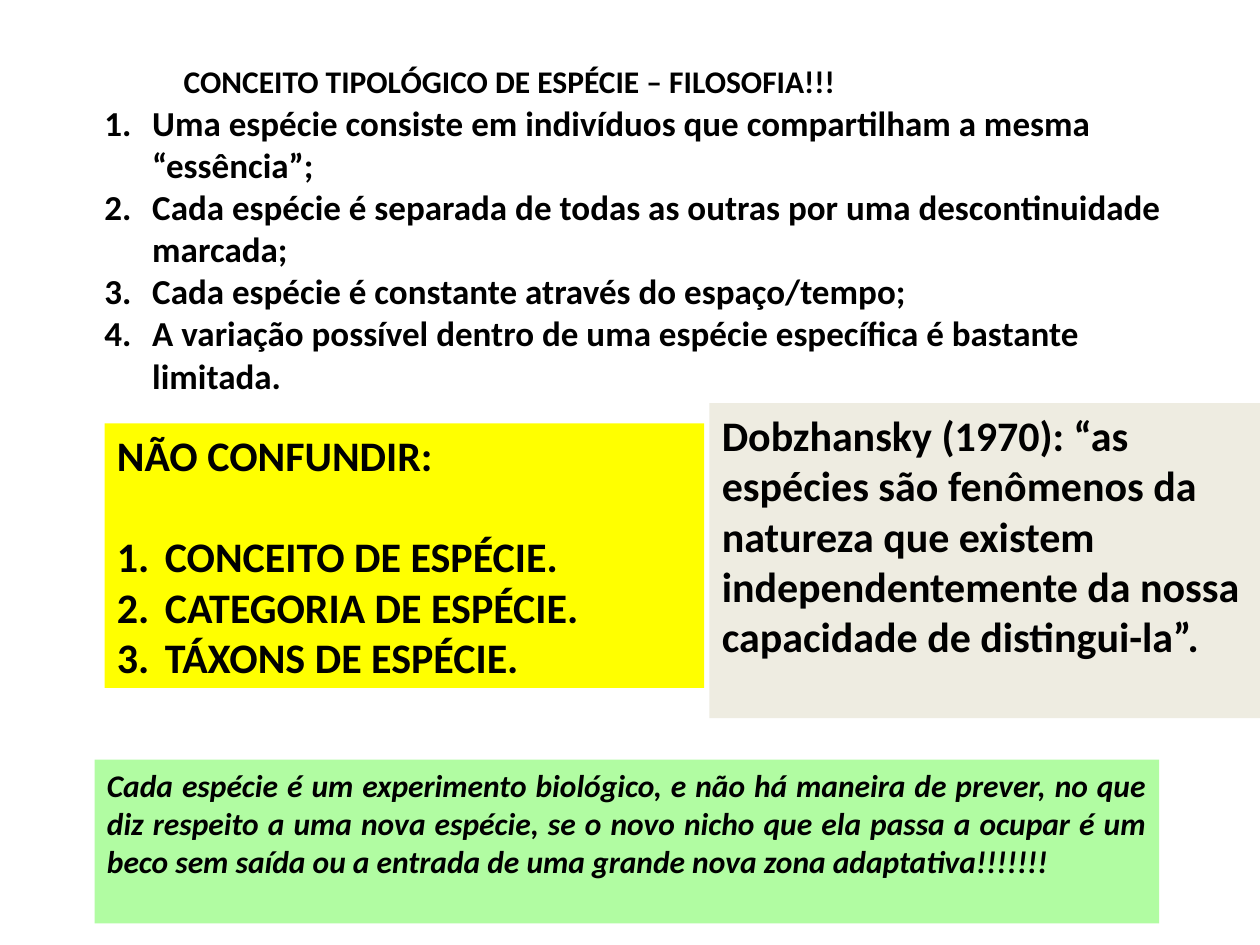
from lxml import etree
from pptx import Presentation
from pptx import util as u
from pptx.dml.color import RGBColor
from pptx.enum import shapes, text
from pptx.oxml import ns

WIDE, HIGH = u.Inches(10), u.Inches(7.5)
COLS, ROWS = 100, 75
HANG = u.Inches(0.38)


def tint(code):
    """Turn a hex string into a colour."""
    return RGBColor.from_string(code)


def place(col, row, cols, rows):
    """Turn grid columns and rows into lengths."""
    dx, dy = WIDE / COLS, HIGH / ROWS
    return [round(n) for n in (col * dx, row * dy, cols * dx, rows * dy)]


def number(para):
    """Give a paragraph a hanging automatic number."""
    props = para._p.get_or_add_pPr()
    props.set("marL", str(HANG))
    props.set("indent", str(-HANG))
    font = etree.SubElement(props, ns.qn("a:buFont"))
    font.set("typeface", "+mj-lt")
    mark = etree.SubElement(props, ns.qn("a:buAutoNum"))
    mark.set("type", "arabicPeriod")


def write(shape, lines, size=24, italic=False, align="LEFT", first=None, gap=0):
    """Fill a shape with bold lines, numbered from index first on."""
    frame = shape.text_frame
    frame.word_wrap = True
    frame.vertical_anchor = text.MSO_ANCHOR.TOP
    for i, line in enumerate(lines):
        para = frame.add_paragraph() if i else frame.paragraphs[0]
        para.alignment = getattr(text.PP_ALIGN, align)
        if first is not None and i >= first:
            if i == first and gap:
                para.space_before = u.Pt(gap)
            number(para)
        run = para.add_run()
        run.text = line
        font = run.font
        font.name, font.size = "Calibri", u.Pt(size)
        font.bold, font.italic = True, italic
        font.color.rgb = tint("000000")


def label(slide, spot, lines, **form):
    """Add a plain text box."""
    write(slide.shapes.add_textbox(*place(*spot)), lines, **form)


def panel(slide, spot, fill, lines, **form):
    """Add a filled rectangle with text."""
    box = slide.shapes.add_shape(shapes.MSO_SHAPE.RECTANGLE, *place(*spot))
    box.shadow.inherit = False
    box.fill.solid()
    box.fill.fore_color.rgb = tint(fill)
    box.line.fill.background()
    write(box, lines, **form)


def main():
    """Build and save the slide."""
    deck = Presentation()
    deck.slide_width, deck.slide_height = WIDE, HIGH
    slide = deck.slides.add_slide(deck.slide_layouts[6])
    label(slide, (13.6, 4.4, 65.9, 7),
          ["CONCEITO TIPOLÓGICO DE ESPÉCIE – FILOSOFIA!!!"], size=18)
    label(slide, (7.3, 7.6, 89.2, 24.6), [
        "Uma espécie consiste em indivíduos que compartilham a mesma “essência”;",
        "Cada espécie é separada de todas as outras por uma descontinuidade marcada;",
        "Cada espécie é constante através do espaço/tempo;",
        "A variação possível dentro de uma espécie específica é bastante limitada.",
    ], size=20, first=0)
    panel(slide, (8.3, 33.6, 47.6, 21), "FFFF00", [
        "NÃO CONFUNDIR:",
        "CONCEITO DE ESPÉCIE.",
        "CATEGORIA DE ESPÉCIE.",
        "TÁXONS DE ESPÉCIE.",
    ], first=1, gap=29)
    panel(slide, (7.5, 60.3, 84.5, 13), "B1FCA2", [
        "Cada espécie é um experimento biológico, e não há maneira de prever, "
        "no que diz respeito a uma nova espécie, se o novo nicho que ela passa "
        "a ocupar é um beco sem saída ou a entrada de uma grande nova zona "
        "adaptativa!!!!!!!",
    ], size=18, italic=True, align="JUSTIFY")
    panel(slide, (56.3, 32, 44.1, 25), "EEECE1", [
        "Dobzhansky (1970): “as espécies são fenômenos da natureza que existem "
        "independentemente da nossa capacidade de distingui-la”.",
    ])
    deck.save("out.pptx")


main()
